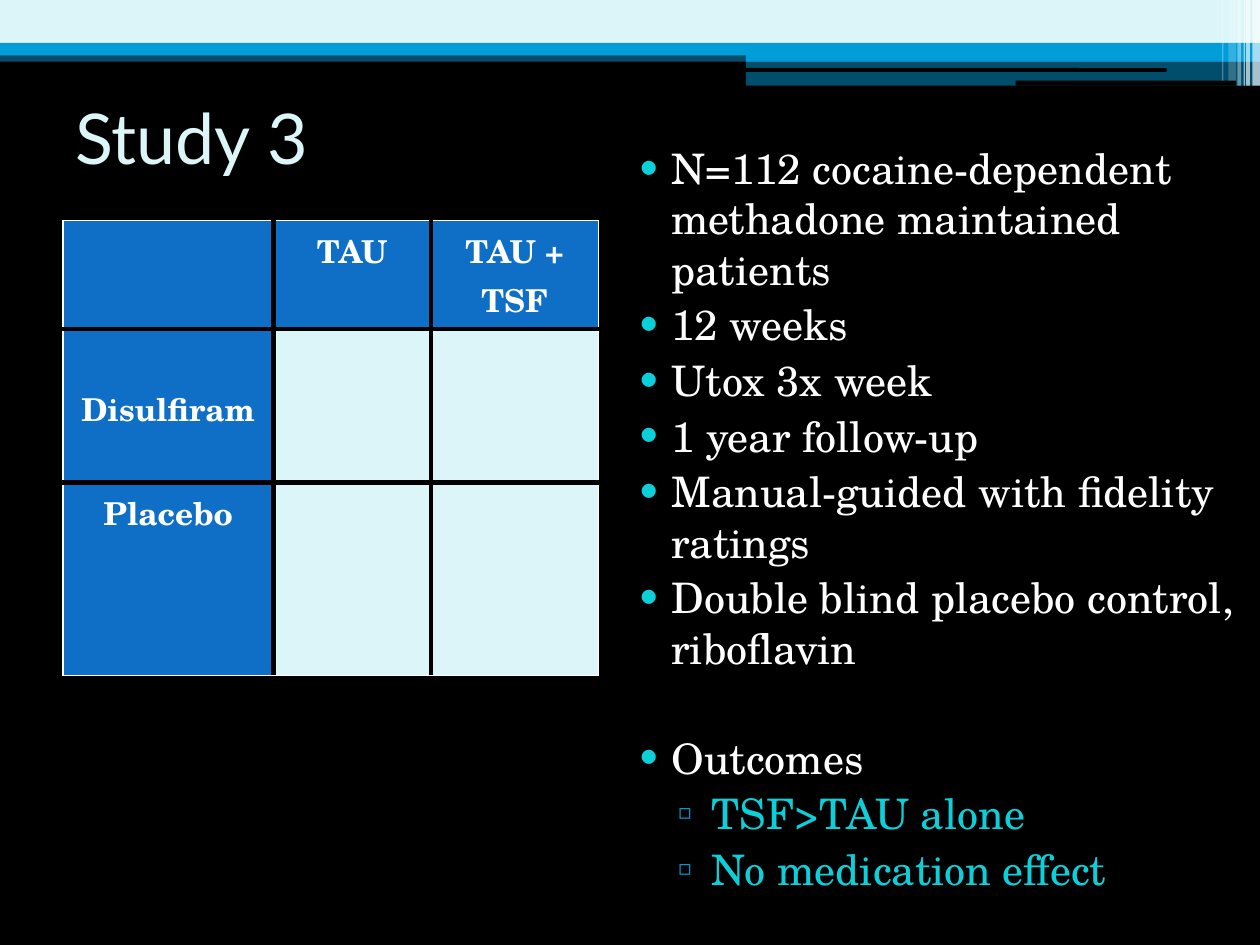
import pptx
import pptx.util
import pptx.dml.color
import pptx.enum.shapes
import pptx.enum.text
import pptx.oxml.ns
from lxml import etree

Inches = pptx.util.Inches
Pt = pptx.util.Pt
qn = pptx.oxml.ns.qn

COLORS = {
    "black": "000000", "white": "FFFFFF", "pale": "DBF5F9",
    "blue": "009DD9", "header": "0F6FC6", "cyan": "0BD0D9",
}
HEADING_FONT = "Lato"
BODY_FONT = "TeX Gyre Schola"


def rgb(name):
    return pptx.dml.color.RGBColor.from_string(COLORS[name])


def paint(fill, color):
    fill.solid()
    fill.fore_color.rgb = rgb(color)


def add_bar(page, box, color, opacity=100, rounded=False):
    kinds = pptx.enum.shapes.MSO_SHAPE
    kind = kinds.ROUNDED_RECTANGLE if rounded else kinds.RECTANGLE
    bar = page.shapes.add_shape(kind, *map(Inches, box))
    bar.shadow.inherit = False
    bar.line.fill.background()
    paint(bar.fill, color)
    if opacity < 100:
        swatch = bar.fill._xPr.find(qn("a:solidFill"))[0]
        etree.SubElement(swatch, qn("a:alpha"), val=str(opacity * 1000))


def add_banner(page, left, top, width):
    """Draw the bands across the top and the light streaks at their right end."""
    half = left + 5.92
    right = left + width
    add_bar(page, (left, top + 0.4, width, 0.09), "blue", 50)
    add_bar(page, (left, top, width, 0.34), "pale")
    add_bar(page, (left, top + 0.34, width, 0.1), "blue")
    add_bar(page, (half, top + 0.39, right - half, 0.1), "blue")
    add_bar(page, (half, top + 0.48, right - half, 0.2), "blue", 50)
    add_bar(page, (half - 0.01, top + 0.54, 3.35, 0.03), "black", rounded=True)
    add_bar(page, (half + 2.14, top + 0.64, 1.75, 0.04), "black", rounded=True)
    streaks = [  # distance from the right edge, width, height, opacity
        (0.06, 0.06, 0.68, 65), (0.11, 0.03, 0.68, 65), (0.13, 0.01, 0.68, 60),
        (0.18, 0.03, 0.68, 40), (0.25, 0.06, 0.64, 20), (0.3, 0.01, 0.64, 30),
    ]
    for offset, streak_width, height, opacity in streaks:
        add_bar(page, (right - offset, top, streak_width, height), "white", opacity)


def add_span(para, text, size, color, font=BODY_FONT, bold=False):
    span = para.add_run()
    span.text = text
    span.font.name = font
    span.font.size = Pt(size)
    span.font.bold = bold
    span.font.color.rgb = rgb(color)


def add_text_frame(page, box):
    frame = page.shapes.add_textbox(*map(Inches, box)).text_frame
    frame.word_wrap = True
    return frame


def add_title(page, box, text):
    frame = add_text_frame(page, box)
    frame.vertical_anchor = pptx.enum.text.MSO_ANCHOR.MIDDLE
    add_span(frame.paragraphs[0], text, 40, "pale", HEADING_FONT)


def set_border(cell, side, color, width):
    line = etree.SubElement(cell._tc.get_or_add_tcPr(), qn("a:" + side), w=str(Pt(width)))
    fill = etree.SubElement(line, qn("a:solidFill"))
    etree.SubElement(fill, qn("a:srgbClr"), val=COLORS[color])


def add_design_table(page, left, top):
    """Place the treatment grid: white outer frame, thick black inner lines."""
    labels = [["", "TAU", "TAU + TSF"], ["Disulfiram", "", ""], ["Placebo", "", ""]]
    widths = [1.67, 1.25, 1.33]
    heights = [0.86, 1.22, 1.53]
    frame = page.shapes.add_table(
        len(heights), len(widths), Inches(left), Inches(top),
        Inches(sum(widths)), Inches(sum(heights)))
    table = frame.table
    for column, width in zip(table.columns, widths):
        column.width = Inches(width)
    for row, height in zip(table.rows, heights):
        row.height = Inches(height)
    for r, texts in enumerate(labels):
        for c, text in enumerate(texts):
            cell = table.cell(r, c)
            outer = {"lnL": c == 0, "lnR": c == len(widths) - 1,
                     "lnT": r == 0, "lnB": r == len(heights) - 1}
            for side, is_outer in outer.items():
                set_border(cell, side, *(("white", 1) if is_outer else ("black", 3)))
            paint(cell.fill, "header" if r == 0 or c == 0 else "pale")
            if text:
                para = cell.text_frame.paragraphs[0]
                para.alignment = pptx.enum.text.PP_ALIGN.CENTER
                add_span(para, text, 18, "white", bold=True)
    table.cell(1, 0).margin_top = Inches(0.44)


def add_bullet(para, mark, color, indent, hanging, percent):
    properties = para._p.get_or_add_pPr()
    properties.set("marL", str(Inches(indent)))
    properties.set("indent", str(-Inches(hanging)))
    tint = etree.SubElement(properties, qn("a:buClr"))
    etree.SubElement(tint, qn("a:srgbClr"), val=COLORS[color])
    etree.SubElement(properties, qn("a:buSzPct"), val=str(percent * 1000))
    etree.SubElement(properties, qn("a:buFont"), typeface=BODY_FONT)
    etree.SubElement(properties, qn("a:buChar"), char=mark)


def add_study_notes(page, box):
    frame = add_text_frame(page, box)
    facts = [
        "N=112 cocaine-dependent methadone maintained patients",
        "12 weeks",
        "Utox 3x week",
        "1 year follow-up",
        "Manual-guided with fidelity ratings",
        "Double blind placebo control, riboflavin",
    ]
    outcomes = ["TSF>TAU alone", "No medication effect"]
    notes = [(text, 0, 3) for text in facts]
    notes.append(("Outcomes", 0, 34))
    notes += [(text, 1, 3) for text in outcomes]
    styles = [
        ("white", ("•", "cyan", 0.4, 0.28, 100)),
        ("cyan", ("▫", "blue", 0.72, 0.27, 70)),
    ]
    for i, (text, level, gap) in enumerate(notes):
        para = frame.add_paragraph() if i else frame.paragraphs[0]
        para.level = level
        para.space_before = Pt(gap)
        color, bullet = styles[level]
        add_bullet(para, *bullet)
        add_span(para, text, 24, color)


def main():
    deck = pptx.Presentation()
    deck.slide_width = Inches(10)
    deck.slide_height = Inches(7.5)
    page = deck.slides.add_slide(deck.slide_layouts[6])
    paint(page.background.fill, "black")
    add_banner(page, 0, 0, 10)
    add_title(page, (0.5, 0.5, 9, 1.17), "Study 3")
    add_design_table(page, 0.5, 1.75)
    add_study_notes(page, (4.83, 1.08, 5.08, 5.37))
    deck.save("out.pptx")


if __name__ == "__main__":
    main()
